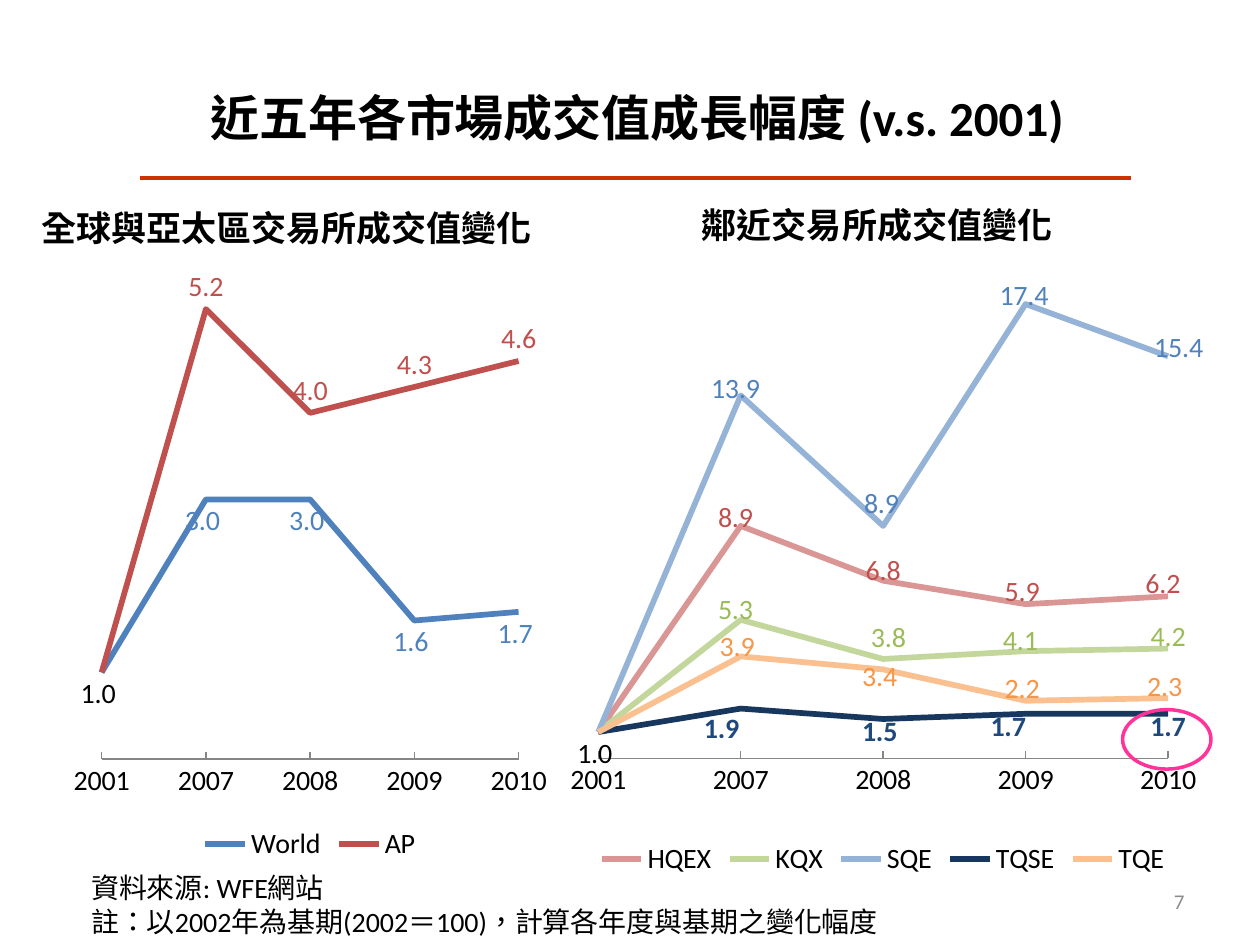
from lxml import etree
from pptx import Presentation
from pptx import util as u
from pptx.chart.data import CategoryChartData
from pptx.dml.color import RGBColor
from pptx.enum import chart as charts, lang, shapes, text
from pptx.oxml import parse_xml
from pptx.oxml.ns import nsdecls, qn

FONT = "Calibri"
COLORS = {
    "black": "000000", "rule": "CC3300", "ring": "FF3399", "axis": "868686",
    "number": "8C8C8C", "blue": "4F81BD", "red": "C0504D", "green": "9BBB59",
    "orange": "F79646", "navy": "1F497D", "pale red": "D99694",
    "pale green": "C3D69B", "pale blue": "95B3D7", "deep navy": "17375E",
    "pale orange": "FAC090",
}
YEARS = ["2001", "2007", "2008", "2009", "2010"]
ABOVE = charts.XL_LABEL_POSITION.ABOVE
BELOW = charts.XL_LABEL_POSITION.BELOW

# name, values, line colour, label colour, label side, label shifts {year index: (x, y)}
REGIONS = [
    ("World", [1.0, 3.0, 3.0, 1.6, 1.7], "blue", "blue", BELOW,
     {0: (-2, 0), 1: (-2, 0), 2: (-2, 0), 3: (-2, 0), 4: (-2, 0)}),
    ("AP", [1.0, 5.2, 4.0, 4.3, 4.6], "red", "red", ABOVE,
     {1: (0, 0), 2: (0, 0), 3: (0, 0), 4: (0, 0)}),
]
EXCHANGES = [
    ("HQEX", [1.0, 8.9, 6.8, 5.9, 6.2], "pale red", "red", ABOVE,
     {1: (-3, 8), 2: (0, 7), 3: (-2, 6), 4: (-3, 6)}),
    ("KQX", [1.0, 5.3, 3.8, 4.1, 4.2], "pale green", "green", ABOVE,
     {1: (-3, 7), 2: (3, 1), 3: (-3, 7), 4: (0, 6)}),
    ("SQE", [1.0, 13.9, 8.9, 17.4, 15.4], "pale blue", "blue", ABOVE,
     {1: (-3, 9), 2: (-1, 0), 3: (-1, 8), 4: (6, 8)}),
    ("TQSE", [1.0, 1.9, 1.5, 1.7, 1.7], "deep navy", "navy", BELOW,
     {1: (-11, -1), 2: (-2, -5), 3: (-10, -5), 4: (0, -5)}),
    ("TQE", [1.0, 3.9, 3.4, 2.2, 2.3], "pale orange", "orange", BELOW,
     {0: (-2, 0), 1: (-2, -18), 2: (-2, -8), 3: (-2, -19), 4: (-2, -19)}),
]


def rgb(name):
    return RGBColor.from_string(COLORS[name])


def points(*lengths):
    return [u.Pt(length) for length in lengths]


def style_font(font, size, color="black", bold=False):
    font.name, font.size, font.bold = FONT, u.Pt(size), bold
    font.color.rgb = rgb(color)


def add_text(slide, box, lines, size, color="black", bold=False,
             align=text.PP_ALIGN.LEFT, anchor=text.MSO_ANCHOR.TOP):
    frame = slide.shapes.add_textbox(*points(*box)).text_frame
    frame.word_wrap = True
    frame.vertical_anchor = anchor
    for index, line in enumerate(lines):
        paragraph = frame.add_paragraph() if index else frame.paragraphs[0]
        paragraph.alignment = align
        run = paragraph.add_run()
        run.text = line
        style_font(run.font, size, color, bold)
        run.font.language_id = lang.MSO_LANGUAGE_ID.TRADITIONAL_CHINESE


def add_rule(slide, left, right, top):
    line = slide.shapes.add_connector(
        shapes.MSO_CONNECTOR.STRAIGHT, *points(left, top, right, top))
    line.line.color.rgb = rgb("rule")
    line.line.width = u.Pt(2.25)
    etree.SubElement(line._element.spPr, qn("a:effectLst"))


def add_ring(slide, box):
    ring = slide.shapes.add_shape(shapes.MSO_SHAPE.OVAL, *points(*box))
    ring.shadow.inherit = False
    ring.fill.background()
    ring.line.color.rgb = rgb("ring")
    ring.line.width = u.Pt(2)


def manual_layout(**settings):
    """Return a c:layout element with the given settings, in schema order."""
    items = "".join(f'<c:{key} val="{value}"/>' for key, value in settings.items())
    return parse_xml(f'<c:layout {nsdecls("c")}><c:manualLayout>{items}'
                     '</c:manualLayout></c:layout>')


def place_plot(chart, x, y, w, h):
    """Fix the inner plot area and run the lines from edge to edge."""
    plot_area = chart._chartSpace.xpath("c:chart/c:plotArea")[0]
    for old in plot_area.xpath("c:layout | c:valAx/c:crossBetween"):
        old.getparent().remove(old)
    plot_area.insert(0, manual_layout(
        layoutTarget="inner", xMode="edge", yMode="edge", x=x, y=y, w=w, h=h))
    crosses = plot_area.xpath("c:valAx/c:crosses")[0]
    crosses.addnext(parse_xml(f'<c:crossBetween {nsdecls("c")} val="midCat"/>'))


def label_series(series, color, side, shifts, width, height):
    """Label the chosen points, each shifted by points from its usual place."""
    series.data_labels.show_value = False
    for index, (x, y) in shifts.items():
        label = series.points[index].data_label
        style_font(label.font, 16, color if index else "black", color == "navy")
        label.position = side
        element = series._element.xpath(
            f'c:dLbls/c:dLbl[c:idx/@val="{index}"]')[0]
        if x or y:
            element.insert(1, manual_layout(
                x=round(x / width, 4), y=round(y / height, 4)))


def add_line_chart(slide, box, plot, maximum, rows):
    data = CategoryChartData(number_format="0.0")
    data.categories = YEARS
    for name, values, *_ in rows:
        data.add_series(name, values)
    chart = slide.shapes.add_chart(
        charts.XL_CHART_TYPE.LINE, *points(*box), data).chart
    style_font(chart.font, 16)
    chart.has_title = False
    chart.has_legend = True
    chart.legend.position = charts.XL_LEGEND_POSITION.BOTTOM
    chart.legend.include_in_layout = False
    chart.plots[0].vary_by_categories = False

    values_axis, years_axis = chart.value_axis, chart.category_axis
    values_axis.minimum_scale, values_axis.maximum_scale = 0, maximum
    values_axis.has_major_gridlines = False
    values_axis.visible = False
    years_axis.major_tick_mark = charts.XL_TICK_MARK.INSIDE
    years_axis.format.line.color.rgb = rgb("axis")
    place_plot(chart, *plot)

    for series, (_, _, color, label_color, side, shifts) in zip(chart.series, rows):
        series.smooth = False
        series.marker.style = charts.XL_MARKER_STYLE.NONE
        series.format.line.color.rgb = rgb(color)
        series.format.line.width = u.Pt(3.25)
        label_series(series, label_color, side, shifts, box[2], box[3])


def main():
    presentation = Presentation()
    presentation.slide_width, presentation.slide_height = points(720, 540)
    slide = presentation.slides.add_slide(presentation.slide_layouts[6])

    add_rule(slide, 80, 646.5, 101.5)
    add_text(slide, (30, 22, 668, 90), ["近五年各市場成交值成長幅度 (v.s. 2001)"], 28,
             bold=True, align=text.PP_ALIGN.CENTER, anchor=text.MSO_ANCHOR.MIDDLE)
    add_line_chart(slide, (22.5, 126, 309.5, 369.5),
                   (0.115, 0.03, 0.77, 0.803), 6, REGIONS)
    add_line_chart(slide, (314.5, 124, 380, 380),
                   (0.072, 0.029, 0.857, 0.785), 20, EXCHANGES)
    add_text(slide, (516, 500.5, 168, 29), ["7"], 12, "number",
             align=text.PP_ALIGN.RIGHT, anchor=text.MSO_ANCHOR.MIDDLE)
    add_text(slide, (45, 494, 523, 46),
             ["資料來源: WFE網站",
              "註：以2002年為基期(2002＝100)，計算各年度與基期之變化幅度"], 16)
    add_text(slide, (16.5, 114.5, 326, 31.5), ["全球與亞太區交易所成交值變化"], 20, bold=True)
    add_text(slide, (394, 112.5, 354, 31.5), ["鄰近交易所成交值變化"], 20, bold=True)
    add_ring(slide, (641.5, 405.5, 50.5, 34))

    presentation.save("out.pptx")


if __name__ == "__main__":
    main()
